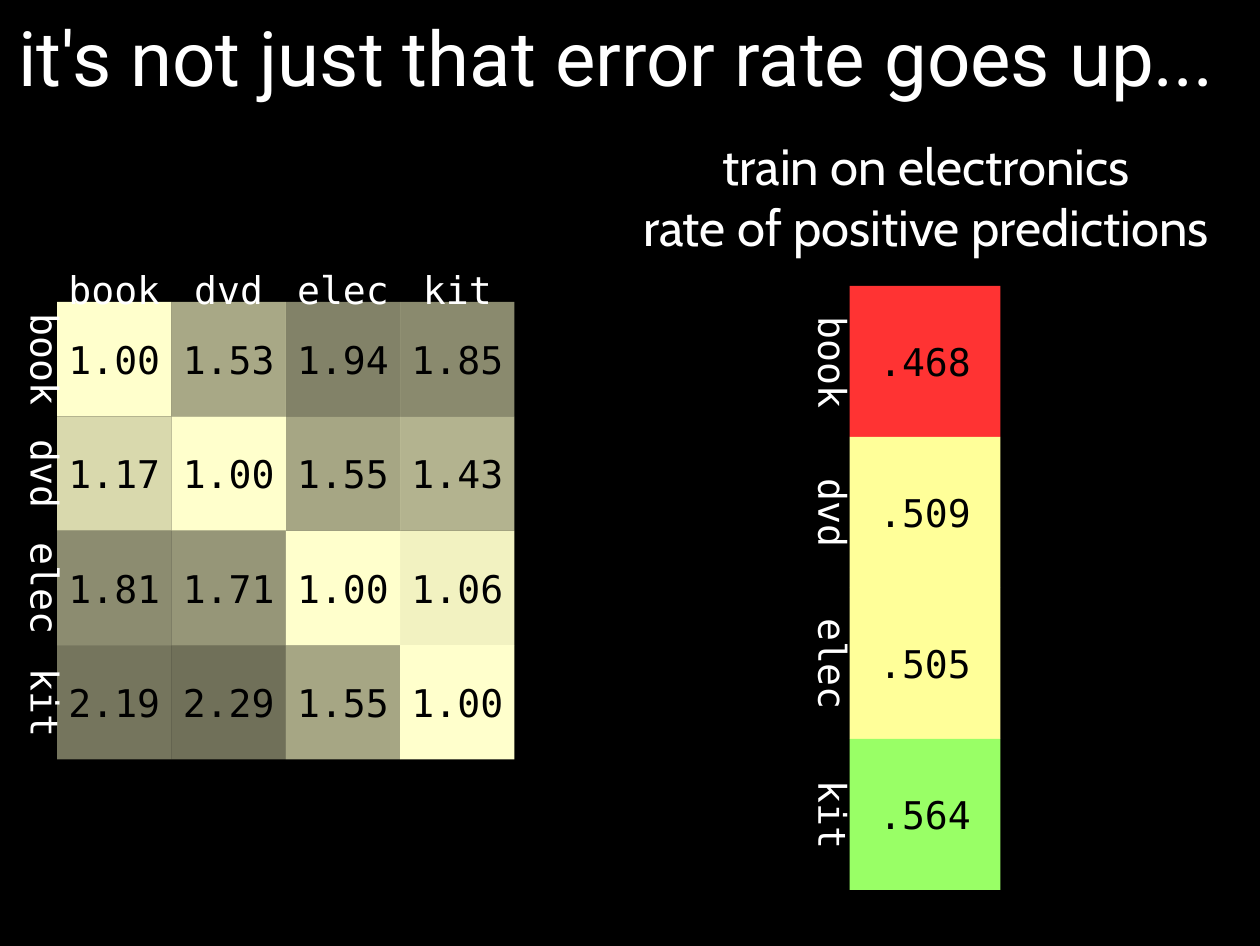
from dataclasses import dataclass

from lxml.etree import SubElement
from pptx import Presentation
from pptx.dml.color import RGBColor
from pptx.enum.shapes import MSO_SHAPE
from pptx.enum.text import MSO_ANCHOR, PP_ALIGN
from pptx.oxml.ns import qn
from pptx.util import Inches, Pt

BLACK = RGBColor(0x00, 0x00, 0x00)
WHITE = RGBColor(0xFF, 0xFF, 0xFF)
CREAM = RGBColor(0xFF, 0xFF, 0xCC)
RED = RGBColor(0xFF, 0x33, 0x33)
YELLOW = RGBColor(0xFF, 0xFF, 0x99)
GREEN = RGBColor(0x99, 0xFF, 0x66)
MONO = "DejaVu Sans Mono"

GRID_LEFT, GRID_TOP, CELL = 0.5, 2.64, 1
BAR_LEFT, BAR_TOP, BLOCK = 7.43, 2.5, 1.32


@dataclass
class Square:
    text: str
    color: RGBColor = CREAM
    opacity: int = 100


DOMAINS = ["book", "dvd", "elec", "kit"]
SAME = Square("1.00")
ERROR_RATIOS = [
    [SAME, Square("1.53", opacity=66), Square("1.94", opacity=51), Square("1.85", opacity=54)],
    [Square("1.17", opacity=85), SAME, Square("1.55", opacity=65), Square("1.43", opacity=70)],
    [Square("1.81", opacity=55), Square("1.71", opacity=59), SAME, Square("1.06", opacity=95)],
    [Square("2.19", opacity=46), Square("2.29", opacity=44), Square("1.55", opacity=65), SAME],
]
POSITIVE_RATES = [
    Square(".468", RED),
    Square(".509", YELLOW),
    Square(".505", YELLOW),
    Square(".564", GREEN),
]


def write(sp, text: str, *, size: int = 24, font: str = MONO, color: RGBColor = WHITE,
          align=PP_ALIGN.CENTER, anchor=MSO_ANCHOR.MIDDLE, wrap: bool = False) -> None:
    tf = sp.text_frame
    tf.margin_left = tf.margin_top = tf.margin_right = tf.margin_bottom = 0
    tf.word_wrap = wrap
    tf.vertical_anchor = anchor
    for i, line in enumerate(text.split("\n")):
        p = tf.add_paragraph() if i else tf.paragraphs[0]
        p.alignment = align
        r = p.add_run()
        r.text = line
        r.font.size = Pt(size)
        r.font.name = font
        r.font.color.rgb = color


def add_text(s, x: float, y: float, w: float, h: float, text: str,
             rotation: int = 0, **fmt) -> None:
    sp = s.shapes.add_textbox(Inches(x), Inches(y), Inches(w), Inches(h))
    sp.rotation = rotation
    write(sp, text, **fmt)


def add_square(s, x: float, y: float, side: float, square: Square) -> None:
    sp = s.shapes.add_shape(MSO_SHAPE.RECTANGLE, Inches(x), Inches(y), Inches(side), Inches(side))
    sp.shadow.inherit = False
    sp.line.fill.background()
    sp.fill.solid()
    sp.fill.fore_color.rgb = square.color
    if square.opacity < 100:
        clr = sp.fill._xPr.find(qn("a:solidFill")).find(qn("a:srgbClr"))
        SubElement(clr, qn("a:alpha")).set("val", str(square.opacity * 1000))
    write(sp, square.text, color=BLACK)


def add_error_grid(s) -> None:
    for row, squares in enumerate(ERROR_RATIOS):
        for col, square in enumerate(squares):
            add_square(s, GRID_LEFT + col * CELL, GRID_TOP + row * CELL, CELL, square)
    for i, domain in enumerate(DOMAINS):
        add_text(s, GRID_LEFT + i * CELL, 2.31, CELL, 0.43, domain)
        add_text(s, -0.1, 2.93 + i * CELL, CELL, 0.43, domain, rotation=90)


def add_rate_bar(s) -> None:
    for i, (domain, square) in enumerate(zip(DOMAINS, POSITIVE_RATES)):
        add_square(s, BAR_LEFT, BAR_TOP + i * BLOCK, BLOCK, square)
        add_text(s, 6.63, 2.88 + i * BLOCK, BLOCK, 0.57, domain, rotation=90)


def main() -> None:
    prs = Presentation()
    prs.slide_width, prs.slide_height = Inches(11.02), Inches(8.27)
    s = prs.slides.add_slide(prs.slide_layouts[6])
    s.background.fill.solid()
    s.background.fill.fore_color.rgb = BLACK
    add_text(s, 0.16, 0.04, 10.65, 0.89, "it's not just that error rate goes up...",
             size=48, font="Roboto", align=PP_ALIGN.LEFT, wrap=True)
    add_error_grid(s)
    add_text(s, 5.29, 1.18, 5.62, 1.03, "train on electronics\nrate of positive predictions",
             size=32, font="Cabin", anchor=MSO_ANCHOR.TOP, wrap=True)
    add_rate_bar(s)
    prs.save("out.pptx")


if __name__ == "__main__":
    main()
